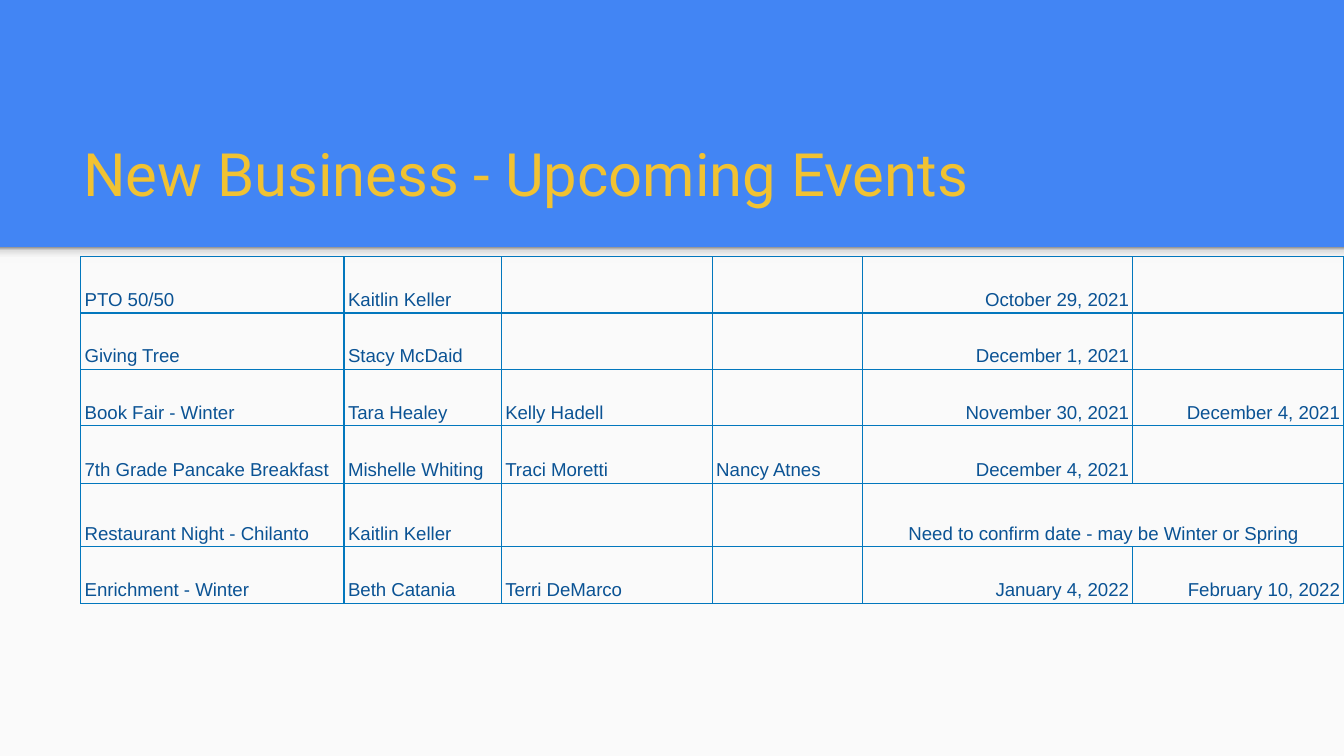
from dataclasses import dataclass

from pptx import Presentation
from pptx.dml.color import RGBColor
from pptx.enum.shapes import MSO_SHAPE
from pptx.enum.text import MSO_ANCHOR, PP_ALIGN
from pptx.oxml import parse_xml
from pptx.oxml.ns import nsdecls
from pptx.util import Inches, Pt


@dataclass(frozen=True)
class Theme:
    band: str = "4285F4"
    panel: str = "FAFAFA"
    title: str = "F1C232"
    text: str = "0B5394"
    border: str = "0277BD"
    shadow: tuple = ((0, "F9F9F9"), (36, "F9F9F9"), (80, "DEDEDE"), (100, "999999"))
    title_font: str = "Roboto"
    body_font: str = "Arial"
    title_size: int = 32
    body_size: int = 10
    border_width: float = 0.75


THEME = Theme()
SLIDE_W = 10
SLIDE_H = SLIDE_W * 9 / 16
BAND_H = 1.84

COLUMN_WIDTHS = [1.96, 1.17, 1.57, 1.12, 2.01, 1.57]
ROW_HEIGHTS = [0.42, 0.42, 0.42, 0.43, 0.47, 0.42]
FIRST_DATE_COLUMN = 4
# Event, up to three organisers, start date, end date
EVENTS = [
    ["PTO 50/50", "Kaitlin Keller", "", "", "October 29, 2021", ""],
    ["Giving Tree", "Stacy McDaid", "", "", "December 1, 2021", ""],
    ["Book Fair - Winter", "Tara Healey", "Kelly Hadell", "",
     "November 30, 2021", "December 4, 2021"],
    ["7th Grade Pancake Breakfast", "Mishelle Whiting", "Traci Moretti",
     "Nancy Atnes", "December 4, 2021", ""],
    # A single date entry spans both date columns
    ["Restaurant Night - Chilanto", "Kaitlin Keller", "", "",
     "Need to confirm date - may be Winter or Spring"],
    ["Enrichment - Winter", "Beth Catania", "Terri DeMarco", "",
     "January 4, 2022", "February 10, 2022"],
]


def rgb(color):
    return RGBColor.from_string(color)


def style_font(font, name, size, color):
    font.name = name
    font.size = Pt(size)
    font.color.rgb = rgb(color)


def add_rect(s, left, top, width, height):
    sp = s.shapes.add_shape(MSO_SHAPE.RECTANGLE, Inches(left), Inches(top),
                            Inches(width), Inches(height))
    sp.shadow.inherit = False
    sp.line.fill.background()
    return sp


def add_panel(s, left, top, width, height):
    """Light content area with a soft shadow along its top edge."""
    panel = add_rect(s, left, top, width, height)
    panel.fill.solid()
    panel.fill.fore_color.rgb = rgb(THEME.panel)

    edge = add_rect(s, left, top, width, 0.12)
    edge.fill.gradient()
    edge.fill.gradient_angle = 90
    stop_list = edge.element.spPr.find(".//{*}gsLst")
    for old in list(stop_list):
        stop_list.remove(old)
    for position, color in THEME.shadow:
        stop_list.append(parse_xml(
            f'<a:gs {nsdecls("a")} pos="{position * 1000}">'
            f'<a:srgbClr val="{color}"/></a:gs>'))


def add_title(s, left, top, width, height, text):
    sp = s.shapes.title
    sp.left, sp.top = Inches(left), Inches(top)
    sp.width, sp.height = Inches(width), Inches(height)
    tf = sp.text_frame
    tf.word_wrap = True
    tf.vertical_anchor = MSO_ANCHOR.BOTTOM
    tf.margin_left = tf.margin_right = Inches(0.1)
    tf.margin_top = tf.margin_bottom = Inches(0.1)
    p = tf.paragraphs[0]
    p.alignment = PP_ALIGN.LEFT
    r = p.add_run()
    r.text = text
    style_font(r.font, THEME.title_font, THEME.title_size, THEME.title)


def format_cell(cell):
    """Borders, insets and no fill; borders must come before the fill."""
    tc_pr = cell._tc.get_or_add_tcPr()
    for side in ("lnL", "lnR", "lnT", "lnB"):
        tc_pr.append(parse_xml(
            f'<a:{side} {nsdecls("a")} w="{Pt(THEME.border_width)}">'
            f'<a:solidFill><a:srgbClr val="{THEME.border}"/></a:solidFill>'
            f'</a:{side}>'))
    cell.fill.background()
    cell.vertical_anchor = MSO_ANCHOR.BOTTOM
    cell.margin_left = cell.margin_right = Inches(0.03)
    cell.margin_top = cell.margin_bottom = Inches(0.02)


def write_cell(cell, text, alignment):
    p = cell.text_frame.paragraphs[0]
    p.alignment = alignment
    p.line_spacing = 1.15
    if text:
        r = p.add_run()
        r.text = text
        style_font(r.font, THEME.body_font, THEME.body_size, THEME.text)
    else:
        p.font.size = Pt(THEME.body_size)


def add_events_table(s, left, top):
    frame = s.shapes.add_table(
        len(ROW_HEIGHTS), len(COLUMN_WIDTHS), Inches(left), Inches(top),
        Inches(sum(COLUMN_WIDTHS)), Inches(sum(ROW_HEIGHTS)))
    table = frame.table
    table.first_row = table.horz_banding = False
    for column, width in zip(table.columns, COLUMN_WIDTHS):
        column.width = Inches(width)
    for row, height in zip(table.rows, ROW_HEIGHTS):
        row.height = Inches(height)
    for cell in table.iter_cells():
        format_cell(cell)

    last = len(COLUMN_WIDTHS) - 1
    for i, event in enumerate(EVENTS):
        spans_dates = len(event) == last
        if spans_dates:
            table.cell(i, FIRST_DATE_COLUMN).merge(table.cell(i, last))
        for j, text in enumerate(event):
            if j < FIRST_DATE_COLUMN:
                alignment = PP_ALIGN.LEFT
            else:
                alignment = PP_ALIGN.CENTER if spans_dates else PP_ALIGN.RIGHT
            write_cell(table.cell(i, j), text, alignment)


def main():
    prs = Presentation()
    prs.slide_width, prs.slide_height = Inches(SLIDE_W), Inches(SLIDE_H)
    s = prs.slides.add_slide(prs.slide_layouts[5])
    s.background.fill.solid()
    s.background.fill.fore_color.rgb = rgb(THEME.band)

    add_panel(s, 0, BAND_H, SLIDE_W, SLIDE_H - BAND_H)
    add_title(s, 0.52, 0.81, 8.99, 0.84, "New Business - Upcoming Events")
    add_events_table(s, 0.6, 1.91)
    prs.save("out.pptx")


if __name__ == "__main__":
    main()
